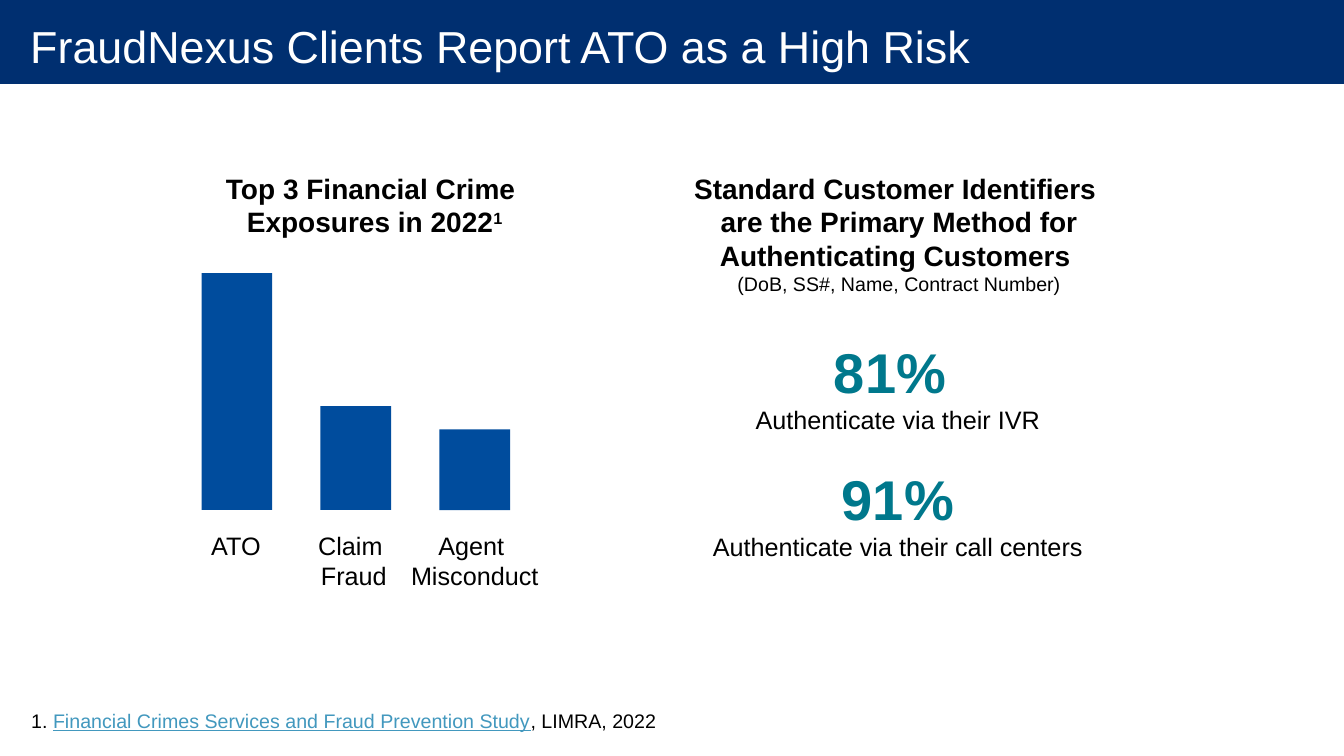
import pptx
import pptx.dml.color
import pptx.enum.shapes
import pptx.enum.text
import pptx.util

RGBColor = pptx.dml.color.RGBColor
ALIGN = pptx.enum.text.PP_ALIGN
NAVY = RGBColor(0x00, 0x2F, 0x70)
BLUE = RGBColor(0x00, 0x4C, 0x9D)
TEAL = RGBColor(0x00, 0x78, 0x8C)
LINK = RGBColor(0x42, 0x98, 0xBE)
BLACK = RGBColor(0x00, 0x00, 0x00)
WHITE = RGBColor(0xFF, 0xFF, 0xFF)


def add_span(para, text, size=18, color=BLACK, bold=False, underline=False,
             superscript=False):
    """Add formatted text to a paragraph; a newline becomes a line break."""
    for index, line in enumerate(text.split("\n")):
        if index:
            para.add_line_break()
        if not line:
            continue
        span = para.add_run()
        span.text = line
        font = span.font
        font.name, font.size = "Arial", pptx.util.Pt(size)
        font.bold, font.underline = bold, underline
        font.color.rgb = color
        if superscript:
            span._r.get_or_add_rPr().set("baseline", "30000")


class SlidePainter:
    """Holds the slide; all places are percentages of the slide's size."""

    def __init__(self, deck):
        self.deck = deck
        self.slide = deck.slides.add_slide(deck.slide_layouts[5])

    def place(self, left, top, width, height):
        across, down = self.deck.slide_width, self.deck.slide_height
        return [round(share * full / 100) for share, full in
                ((left, across), (top, down), (width, across), (height, down))]

    def rectangle(self, area, color, behind=False):
        box = self.slide.shapes.add_shape(
            pptx.enum.shapes.MSO_SHAPE.RECTANGLE, *self.place(*area))
        box.shadow.inherit = False
        box.fill.solid()
        box.fill.fore_color.rgb = color
        box.line.fill.background()
        if behind:
            self.slide.shapes._spTree.insert(2, box._element)

    def title(self, area, text):
        box = self.slide.shapes.title
        box.left, box.top, box.width, box.height = self.place(*area)
        frame = box.text_frame
        frame.auto_size = pptx.enum.text.MSO_AUTO_SIZE.NONE
        frame.vertical_anchor = pptx.enum.text.MSO_ANCHOR.MIDDLE
        frame.margin_left = pptx.util.Inches(0.3)
        frame.margin_right = pptx.util.Inches(0.2)
        frame.margin_top = frame.margin_bottom = 0
        frame.paragraphs[0].alignment = ALIGN.LEFT
        add_span(frame.paragraphs[0], text, size=32, color=WHITE)

    def text(self, area, *paragraphs, align=ALIGN.CENTER, wrap=False):
        """Each paragraph is a list of (text, format) pairs."""
        frame = self.slide.shapes.add_textbox(*self.place(*area)).text_frame
        frame.word_wrap = wrap
        for index, spans in enumerate(paragraphs):
            para = frame.add_paragraph() if index else frame.paragraphs[0]
            para.alignment = align
            for text, style in spans:
                add_span(para, text, **style)


def main():
    deck = pptx.Presentation()
    deck.slide_width = pptx.util.Inches(13.33)
    deck.slide_height = pptx.util.Inches(7.5)
    painter = SlidePainter(deck)

    # Title band
    painter.rectangle((0, 0, 100, 11.1), NAVY, behind=True)
    painter.title((0, -0.4, 100, 12.93),
                  "FraudNexus Clients Report ATO as a High Risk")

    # Column headings
    heading = dict(size=20, bold=True)
    painter.text((15.98, 22, 23.78, 10.27),
                 [("Top 3 Financial Crime \nExposures in 2022", heading),
                  ("1", dict(heading, superscript=True))])
    painter.text((45.6, 22, 42.6, 18.4),
                 [("Standard Customer Identifiers \nare the Primary Method for "
                   "Authenticating Customers \n", heading),
                  ("(DoB, SS#, Name, Contract Number)", dict(size=14))],
                 wrap=True)

    # Exposure bars, standing on one baseline, with their labels
    bar_left, bar_step, bar_width, baseline = 15, 8.85, 5.25, 67.47
    exposures = [("ATO", 31.33, 14.93, 5.25),
                 ("Claim \nFraud", 13.73, 22.88, 6.9),
                 ("Agent \nMisconduct", 10.67, 29.78, 11.1)]
    for index, (label, height, left, width) in enumerate(exposures):
        painter.rectangle((bar_left + index * bar_step, baseline - height,
                           bar_width, height), BLUE)
        painter.text((left, 69.47, width, 9.47), [(label, {})])

    # Authentication figures
    figure = dict(size=40, bold=True, color=TEAL)
    methods = [("81% ", "Authenticate via their IVR", 44),
               ("91%", "Authenticate via their call centers", 60.8)]
    for percent, method, top in methods:
        painter.text((52.1, top, 29.4, 14.4),
                     [(percent, figure)], [(method, {})])

    # Source note
    note = dict(size=14)
    painter.text((1.58, 93.07, 48.08, 4.53),
                 [("1. ", note),
                  ("Financial Crimes Services and Fraud Prevention Study",
                   dict(note, color=LINK, underline=True)),
                  (", LIMRA, 2022", note)],
                 align=ALIGN.LEFT)

    deck.save("out.pptx")


if __name__ == "__main__":
    main()
